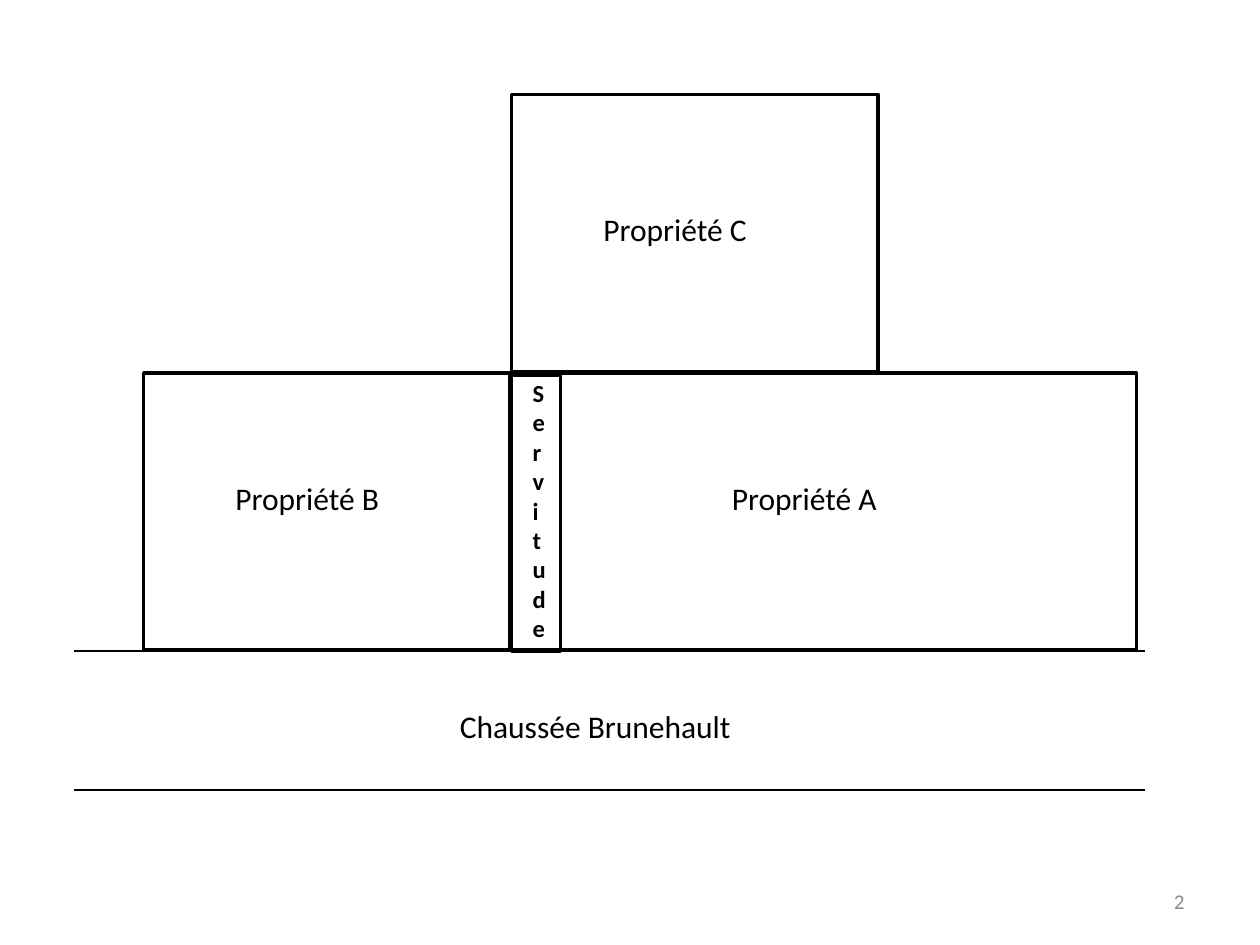
from lxml.etree import SubElement
from pptx import Presentation
from pptx.dml.color import RGBColor
from pptx.enum.shapes import MSO_CONNECTOR, MSO_SHAPE
from pptx.enum.text import MSO_ANCHOR, PP_ALIGN
from pptx.oxml.ns import qn
from pptx.util import Inches, Pt

COLORS = {"ink": "000000", "number": "8C8C8C", "background": "FFFFFF"}
FONT = "Calibri"

# Grid lines of the plan, in inches
COLUMNS = {"road_start": 0.59, "west": 1.14, "middle": 4.06, "road_end": 9.09}
ROWS = {"back": 0.75, "front": 2.96, "road_top": 5.17, "road_bottom": 6.27}
LOT_WIDTH, LOT_HEIGHT = 2.91, 2.2
LABEL_WIDTH, LABEL_HEIGHT = 2.36, 0.4


def color(name):
    return RGBColor.from_string(COLORS[name])


def add_outline(slide, left, top, width, height):
    shape = slide.shapes.add_shape(
        MSO_SHAPE.RECTANGLE, *map(Inches, (left, top, width, height)))
    shape.shadow.inherit = False
    shape.fill.background()
    shape.line.color.rgb = color("ink")
    shape.line.width = Pt(2)


def add_road_edge(slide, top):
    start, end = COLUMNS["road_start"], COLUMNS["road_end"]
    connector = slide.shapes.add_connector(
        MSO_CONNECTOR.STRAIGHT, *map(Inches, (start, top, end, top)))
    connector.line.color.rgb = color("ink")
    connector.line.width = Pt(1.25)
    SubElement(connector._element.spPr, qn("a:effectLst"))


def add_label(slide, text, left, top, width=LABEL_WIDTH, height=LABEL_HEIGHT,
              size=18, bold=False, ink="ink", align=PP_ALIGN.LEFT,
              anchor=MSO_ANCHOR.TOP):
    box = slide.shapes.add_textbox(*map(Inches, (left, top, width, height)))
    text_frame = box.text_frame
    text_frame.word_wrap = True
    text_frame.vertical_anchor = anchor
    text_frame.text = text
    paragraph = text_frame.paragraphs[0]
    paragraph.alignment = align
    font = paragraph.runs[0].font
    font.name, font.size, font.bold = FONT, Pt(size), bold
    font.color.rgb = color(ink)


def add_road(slide):
    for row in ("road_top", "road_bottom"):
        add_road_edge(slide, ROWS[row])
    add_label(slide, "Chaussée Brunehault", COLUMNS["west"], 5.56, 7.17,
              align=PP_ALIGN.CENTER)


def add_property(slide, name, column, row, width, label_shift):
    """Draw a lot and its name, shifted right and down from the lot's corner."""
    left, top = COLUMNS[column], ROWS[row]
    add_outline(slide, left, top, width, LOT_HEIGHT)
    shift_right, shift_down = label_shift
    add_label(slide, f"Propriété {name}", left + shift_right, top + shift_down)


def add_easement(slide):
    """Draw the strip whose narrow label wraps to one letter a line."""
    left, top = COLUMNS["middle"], ROWS["front"]
    add_outline(slide, left, top + 0.02, 0.39, 2.19)
    add_label(slide, "Servitude", left + 0.07, top - 0.01, 0.24, 2.22,
              size=14, bold=True)


def main():
    presentation = Presentation()
    presentation.slide_width, presentation.slide_height = Inches(10), Inches(7.5)
    slide = presentation.slides.add_slide(presentation.slide_layouts[6])
    slide.background.fill.solid()
    slide.background.fill.fore_color.rgb = color("background")

    add_road(slide)
    add_property(slide, "A", "middle", "front", 4.96, (1.65, 0.79))
    add_property(slide, "B", "west", "front", LOT_WIDTH, (0.63, 0.79))
    add_property(slide, "C", "middle", "back", LOT_WIDTH, (0.63, 0.87))
    add_easement(slide)
    add_label(slide, "2", 7.17, 6.95, 2.33, size=12, ink="number",
              align=PP_ALIGN.RIGHT, anchor=MSO_ANCHOR.MIDDLE)
    presentation.save("out.pptx")


if __name__ == "__main__":
    main()
